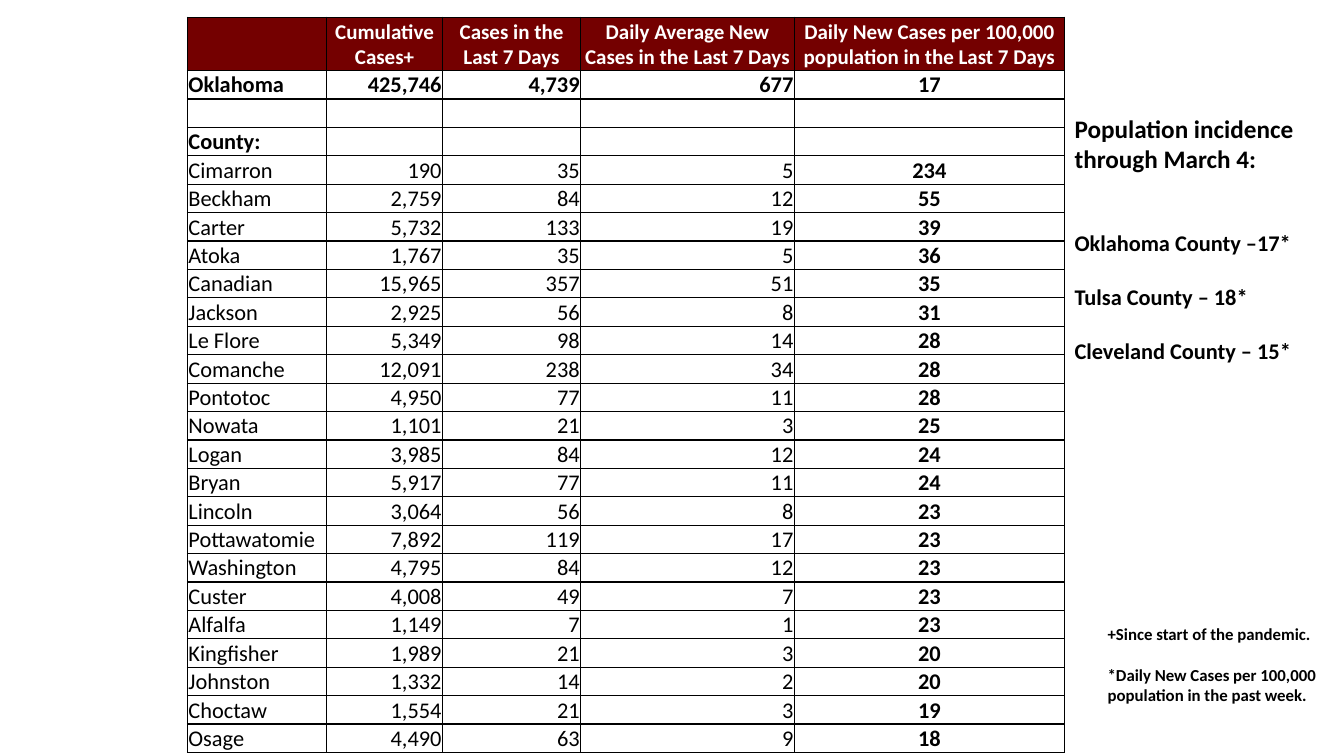
from dataclasses import dataclass

from lxml.etree import SubElement
from pptx import Presentation
from pptx.dml.color import RGBColor
from pptx.enum.text import MSO_ANCHOR as ANCHOR, MSO_AUTO_SIZE as AUTO, PP_ALIGN as ALIGN
from pptx.oxml.ns import qn
from pptx.slide import Slide
from pptx.table import _Cell as Cell
from pptx.text.text import TextFrame, _Paragraph as Paragraph
from pptx.util import Inches, Pt

MAROON = RGBColor(0x74, 0x00, 0x00)
WHITE = RGBColor(0xFF, 0xFF, 0xFF)
BLACK = RGBColor(0x00, 0x00, 0x00)
FONT = "Calibri"
WIDTH, HEIGHT = Inches(13.33), Inches(7.5)


@dataclass(frozen=True)
class Box:
    left: float
    top: float
    width: float
    height: float

    def frame(self) -> tuple[int, int, int, int]:
        return across(self.left), down(self.top), across(self.width), down(self.height)


@dataclass(frozen=True)
class Column:
    heading: str
    width: float
    align: ALIGN
    bold: bool = False


HEADING_BOX = Box(79.2, 14.27, 20.33, 9.47)
COUNTIES_BOX = Box(79.2, 29.6, 20.33, 19.2)
NOTES_BOX = Box(81.68, 81.87, 17.85, 12.13)
TABLE_BOX = Box(13.95, 2.27, 65.26, 95.63)
HEADER_ROW, BODY_ROW = 7.07, 3.69

COLUMNS = [
    Column("", 10.35, ALIGN.LEFT),
    Column("Cumulative Cases+", 8.63, ALIGN.RIGHT),
    Column("Cases in the Last 7 Days", 10.28, ALIGN.RIGHT),
    Column("Daily Average New Cases in the Last 7 Days", 15.9, ALIGN.RIGHT),
    Column("Daily New Cases per 100,000 population in the Last 7 Days", 20.1, ALIGN.CENTER, True),
]
SUMMARY = [
    ("Oklahoma", "425,746", "4,739", "677", "17"),
    ("", "", "", "", ""),
    ("County:", "", "", "", ""),
]
COUNTIES = [
    ("Cimarron", "190", "35", "5", "234"),
    ("Beckham", "2,759", "84", "12", "55"),
    ("Carter", "5,732", "133", "19", "39"),
    ("Atoka", "1,767", "35", "5", "36"),
    ("Canadian", "15,965", "357", "51", "35"),
    ("Jackson", "2,925", "56", "8", "31"),
    ("Le Flore", "5,349", "98", "14", "28"),
    ("Comanche", "12,091", "238", "34", "28"),
    ("Pontotoc", "4,950", "77", "11", "28"),
    ("Nowata", "1,101", "21", "3", "25"),
    ("Logan", "3,985", "84", "12", "24"),
    ("Bryan", "5,917", "77", "11", "24"),
    ("Lincoln", "3,064", "56", "8", "23"),
    ("Pottawatomie", "7,892", "119", "17", "23"),
    ("Washington", "4,795", "84", "12", "23"),
    ("Custer", "4,008", "49", "7", "23"),
    ("Alfalfa", "1,149", "7", "1", "23"),
    ("Kingfisher", "1,989", "21", "3", "20"),
    ("Johnston", "1,332", "14", "2", "20"),
    ("Choctaw", "1,554", "21", "3", "19"),
    ("Osage", "4,490", "63", "9", "18"),
]


def across(percent: float) -> int:
    return round(WIDTH * percent / 100)


def down(percent: float) -> int:
    return round(HEIGHT * percent / 100)


def style(p: Paragraph, size: float, color: RGBColor, bold: bool, align: ALIGN) -> None:
    p.alignment = align
    for r in p.runs:
        r.font.name, r.font.size, r.font.bold = FONT, Pt(size), bold
        r.font.color.rgb = color
    if not p.runs:
        SubElement(p._p, qn("a:endParaRPr"), sz=str(size * 100))


def fill_box(tf: TextFrame, lines: list[str], size: float, gap: float) -> None:
    tf.text = "\n".join(lines)
    tf.word_wrap, tf.auto_size, tf.vertical_anchor = True, AUTO.NONE, ANCHOR.TOP
    for i, p in enumerate(tf.paragraphs):
        p.space_before = Pt(gap if i else 0)
        pPr = p._p.get_or_add_pPr()
        pPr.set("marL", "0")
        pPr.set("indent", "0")
        SubElement(pPr, qn("a:buNone"))
        style(p, size, BLACK, True, ALIGN.LEFT)


def add_borders(cell: Cell) -> None:
    tcPr = cell._tc.get_or_add_tcPr()
    for side in ("L", "R", "T", "B"):
        ln = SubElement(tcPr, qn(f"a:ln{side}"), w=str(Pt(1)))
        fill = SubElement(ln, qn("a:solidFill"))
        SubElement(fill, qn("a:srgbClr"), val=str(BLACK))


def fill_cell(cell: Cell, text: str, size: int, color: RGBColor, bold: bool, align: ALIGN) -> None:
    cell.margin_left = cell.margin_right = cell.margin_top = Inches(0.01)
    cell.margin_bottom = 0
    cell.vertical_anchor = ANCHOR.BOTTOM
    cell.text_frame.text = text
    style(cell.text_frame.paragraphs[0], size, color, bold, align)
    add_borders(cell)


def add_case_table(s: Slide) -> None:
    rows = SUMMARY + COUNTIES
    table = s.shapes.add_table(len(rows) + 1, len(COLUMNS), *TABLE_BOX.frame()).table
    table.first_row = table.horz_banding = False
    for i, row in enumerate(table.rows):
        row.height = down(BODY_ROW if i else HEADER_ROW)
    for c, column in enumerate(COLUMNS):
        table.columns[c].width = across(column.width)
        header = table.cell(0, c)
        fill_cell(header, column.heading, 15, WHITE, True, ALIGN.CENTER)
        header.fill.solid()
        header.fill.fore_color.rgb = MAROON
        for i, values in enumerate(rows):
            cell = table.cell(i + 1, c)
            bold = column.bold or i < len(SUMMARY)
            fill_cell(cell, values[c], 16, BLACK, bold, column.align)
            cell.fill.background()


def main() -> None:
    prs = Presentation()
    prs.slide_width, prs.slide_height = WIDTH, HEIGHT
    s = prs.slides.add_slide(prs.slide_layouts[1])
    title, body = s.shapes.title, s.placeholders[1]
    for sp, box in ((title, HEADING_BOX), (body, COUNTIES_BOX)):
        sp.left, sp.top, sp.width, sp.height = box.frame()
    fill_box(title.text_frame, ["Population incidence through March 4:"], 18, 0)
    fill_box(
        body.text_frame,
        ["Oklahoma County –17*", "Tulsa County – 18*", "Cleveland County – 15*"],
        16, 19.5,
    )
    add_case_table(s)
    notes = s.shapes.add_textbox(*NOTES_BOX.frame())
    fill_box(
        notes.text_frame,
        ["+Since start of the pandemic.", "*Daily New Cases per 100,000 population in the past week."],
        12, 14.6,
    )
    prs.save("out.pptx")


if __name__ == "__main__":
    main()
